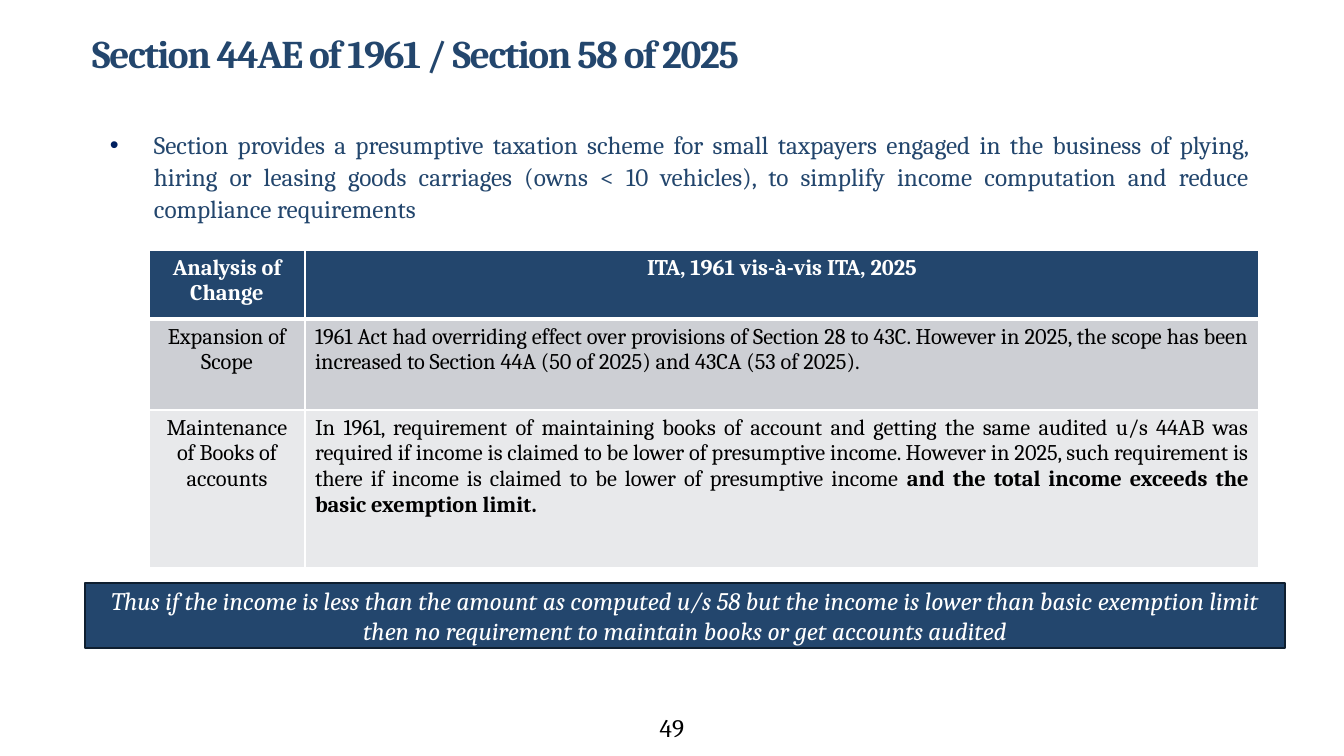
from lxml.etree import SubElement
from pptx import Presentation
from pptx.dml.color import RGBColor
from pptx.enum.shapes import MSO_SHAPE
from pptx.enum.text import MSO_ANCHOR as Anchor, MSO_AUTO_SIZE as AutoSize, PP_ALIGN as Align
from pptx.oxml.ns import qn
from pptx.util import Pt

PX = 914400 / 100.8
COLORS = {
    "navy": "23466D", "outline": "0F1F30", "bullet": "002060",
    "white": "FFFFFF", "black": "000000", "gray": "CDCFD4", "pale": "E8E9EB",
}


def px(*lengths):
    return [round(length * PX) for length in lengths]


def style(para, size, color, align, bold=False, italic=False):
    para.alignment = align
    font = para.font
    font.name, font.size = "Cambria", Pt(size)
    font.bold, font.italic = bold, italic
    font.color.rgb = RGBColor.from_string(COLORS[color])


deck = Presentation()
deck.slide_width, deck.slide_height = px(1344, 756)
page = deck.slides.add_slide(deck.slide_layouts[5])
shapes = page.shapes

# Title
title = shapes.title
title.left, title.top, title.width, title.height = px(82, 13, 1159, 86)
frame = title.text_frame
frame.text = "Section 44AE of 1961 / Section 58 of 2025"
frame.auto_size = AutoSize.NONE
frame.vertical_anchor = Anchor.MIDDLE
para = frame.paragraphs[0]
para.line_spacing = 0.9
style(para, 28, "navy", Align.LEFT, bold=True)
para.runs[0].font._element.set("spc", "-100")

# Introductory bullet
intro = shapes.add_textbox(*px(100, 123, 1159, 115))
intro.text_frame.word_wrap = True
para = intro.text_frame.paragraphs[0]
para.text = (
    "Section provides a presumptive taxation scheme for small taxpayers engaged in the "
    "business of plying, hiring or leasing goods carriages (owns < 10 vehicles), to "
    "simplify income computation and reduce compliance requirements"
)
para.line_spacing = 1.05
para.space_after = Pt(6)
props = para._p.get_or_add_pPr()
indent = px(44)[0]
props.set("marL", str(indent))
props.set("indent", str(-indent))
bullet_color = SubElement(props, qn("a:buClr"))
SubElement(bullet_color, qn("a:srgbClr"), val=COLORS["bullet"])
SubElement(props, qn("a:buFont"), typeface="Arial")
SubElement(props, qn("a:buChar"), char="•")
style(para, 18, "navy", Align.JUSTIFY)

# Comparison table: each cell is a list of text runs, the second one bold
rows = [
    (69, "navy", ["Analysis of Change"], ["ITA, 1961 vis-à-vis ITA, 2025"]),
    (91, "gray", ["Expansion of Scope"], [
        "1961 Act had overriding effect over provisions of Section 28 to 43C. However in "
        "2025, the scope has been increased to Section 44A (50 of 2025) and 43CA (53 of 2025)."
    ]),
    (158, "pale", ["Maintenance of Books of accounts"], [
        "In 1961, requirement of maintaining books of account and getting the same audited "
        "u/s 44AB was required if income is claimed to be lower of presumptive income. "
        "However in 2025, such requirement is there if income is claimed to be lower of "
        "presumptive income ",
        "and the total income exceeds the basic exemption limit.",
    ]),
]
widths = px(156, 954)
table = shapes.add_table(len(rows), len(widths), *px(149, 250, 1110, 318)).table
for column, width in zip(table.columns, widths):
    column.width = width

for row_index, (height, fill, *texts) in enumerate(rows):
    table.rows[row_index].height = px(height)[0]
    header = row_index == 0
    for column_index, texts_in_cell in enumerate(texts):
        cell = table.cell(row_index, column_index)
        para = cell.text_frame.paragraphs[0]
        for run_index, text in enumerate(texts_in_cell):
            span = para.add_run()
            span.text = text
            if run_index == 1:
                span.font.bold = True
        align = Align.CENTER if header or column_index == 0 else Align.JUSTIFY
        style(para, 16, "white" if header else "black", align, bold=header)

        cell_props = cell._tc.get_or_add_tcPr()
        for side in ("L", "R", "T", "B"):
            below_header = (row_index, side) in ((0, "B"), (1, "T"))
            border = SubElement(cell_props, qn(f"a:ln{side}"), w=str(Pt(3 if below_header else 1)))
            border_fill = SubElement(border, qn("a:solidFill"))
            SubElement(border_fill, qn("a:srgbClr"), val=COLORS["white"])
        cell.fill.solid()
        cell.fill.fore_color.rgb = RGBColor.from_string(COLORS[fill])

# Conclusion banner
banner = shapes.add_shape(MSO_SHAPE.RECTANGLE, *px(85, 583, 1200, 65))
banner.shadow.inherit = False
banner.fill.solid()
banner.fill.fore_color.rgb = RGBColor.from_string(COLORS["navy"])
banner.line.color.rgb = RGBColor.from_string(COLORS["outline"])
banner.line.width = Pt(1)
frame = banner.text_frame
frame.word_wrap = True
frame.vertical_anchor = Anchor.MIDDLE
para = frame.paragraphs[0]
para.text = (
    "Thus if the income is less than the amount as computed u/s 58 but the income is lower "
    "than basic exemption limit then no requirement to maintain books or get accounts audited"
)
style(para, 18, "white", Align.CENTER, italic=True)

# Page number
number = shapes.add_textbox(*px(521, 707, 302, 40))
number.text_frame.word_wrap = True
para = number.text_frame.paragraphs[0]
para.text = "49"
style(para, 18, "black", Align.CENTER)

deck.save("out.pptx")
